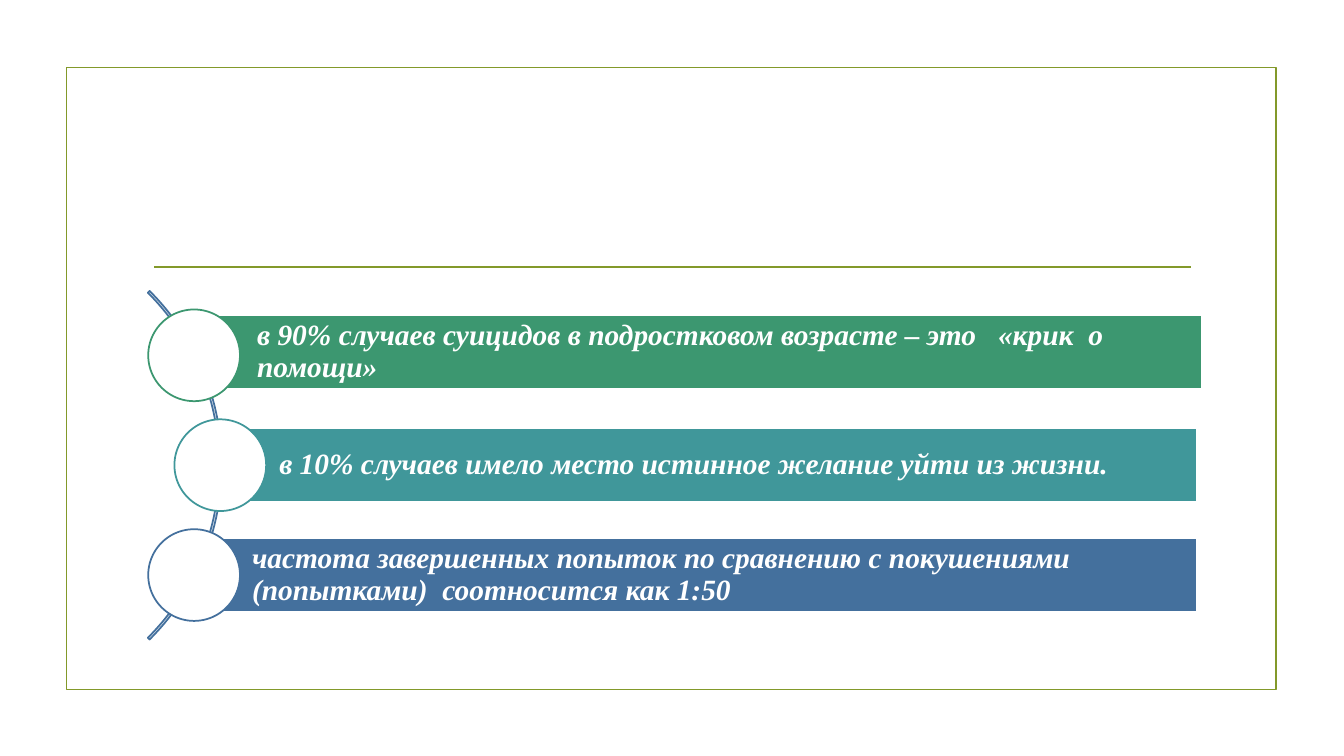
from dataclasses import dataclass

from lxml import etree
from pptx import Presentation
from pptx.dml.color import RGBColor
from pptx.enum.shapes import MSO_CONNECTOR, MSO_SHAPE
from pptx.enum.text import MSO_ANCHOR, PP_ALIGN
from pptx.oxml.ns import qn
from pptx.util import Inches, Pt

RECTANGLE = MSO_SHAPE.RECTANGLE
OVAL = MSO_SHAPE.OVAL
BLOCK_ARC = MSO_SHAPE.BLOCK_ARC
STRAIGHT = MSO_CONNECTOR.STRAIGHT
MIDDLE = MSO_ANCHOR.MIDDLE
LEFT = PP_ALIGN.LEFT


@dataclass(frozen=True)
class Theme:
    olive: str = "83992A"
    green: str = "3C9770"
    teal: str = "40979A"
    blue: str = "44709D"
    white: str = "FFFFFF"
    font: str = "Times New Roman"
    text_size: float = 21
    line_width: float = 1.25


class Page:
    def __init__(self, slide, theme):
        self.slide = slide
        self.theme = theme

    def set_line(self, line, color):
        line.color.rgb = RGBColor.from_string(color)
        line.width = Pt(self.theme.line_width)

    def shape(self, kind, left, top, width, height, line, fill=None):
        shape = self.slide.shapes.add_shape(
            kind, Inches(left), Inches(top), Inches(width), Inches(height))
        shape.shadow.inherit = False
        if fill:
            shape.fill.solid()
            shape.fill.fore_color.rgb = RGBColor.from_string(fill)
        else:
            shape.fill.background()
        self.set_line(shape.line, line)
        return shape

    def rule(self, left, right, top):
        connector = self.slide.shapes.add_connector(
            STRAIGHT, Inches(left), Inches(top), Inches(right), Inches(top))
        etree.SubElement(connector._element.spPr, qn("a:effectLst"))
        self.set_line(connector.line, self.theme.olive)

    def arc(self, left, top, size, adjustments):
        arc = self.shape(BLOCK_ARC, left, top, size, size, self.theme.blue)
        for index, value in enumerate(adjustments):
            arc.adjustments[index] = value

    def bar(self, left, top, width, color, text):
        bar = self.shape(RECTANGLE, left, top, width, 0.73,
                         self.theme.white, color)
        frame = bar.text_frame
        frame.word_wrap = True
        frame.vertical_anchor = MIDDLE
        frame.margin_left = Inches(0.58)
        frame.margin_top = frame.margin_right = frame.margin_bottom = Inches(0.06)
        frame.text = text
        para = frame.paragraphs[0]
        para.alignment = LEFT
        para.line_spacing = 0.9
        font = para.runs[0].font
        font.name = self.theme.font
        font.size = Pt(self.theme.text_size)
        font.bold = font.italic = True
        font.color.rgb = RGBColor.from_string(self.theme.white)

    def circle(self, left, top, color):
        self.shape(OVAL, left, top, 0.91, 0.91, color, self.theme.white)


def main():
    theme = Theme()
    deck = Presentation()
    deck.slide_width = Inches(13.33)
    deck.slide_height = Inches(7.5)
    page = Page(deck.slides.add_slide(deck.slide_layouts[6]), theme)

    page.shape(RECTANGLE, 0.66, 0.67, 12, 6.17, theme.olive)
    page.rule(1.53, 11.81, 2.65)
    page.arc(-2.69, 2.17, 4.89, (189, 27, 0.005))

    # Bar left, top and width, circle left, color, text
    facts = [
        (1.97, 3.13, 9.95, 1.47, theme.green,
         "в 90% случаев суицидов в подростковом возрасте – это   «крик  о  помощи»"),
        (2.19, 4.25, 9.68, 1.73, theme.teal,
         "в 10% случаев имело место истинное желание уйти из жизни."),
        (1.92, 5.34, 9.95, 1.47, theme.blue,
         "частота завершенных попыток по сравнению с покушениями "
         "(попытками)  соотносится как 1:50"),
    ]
    for row, (left, top, width, circle_left, color, text) in enumerate(facts):
        page.bar(left, top, width, color, text)
        page.circle(circle_left, 3.07 + 1.09 * row, color)

    deck.save("out.pptx")


if __name__ == "__main__":
    main()
